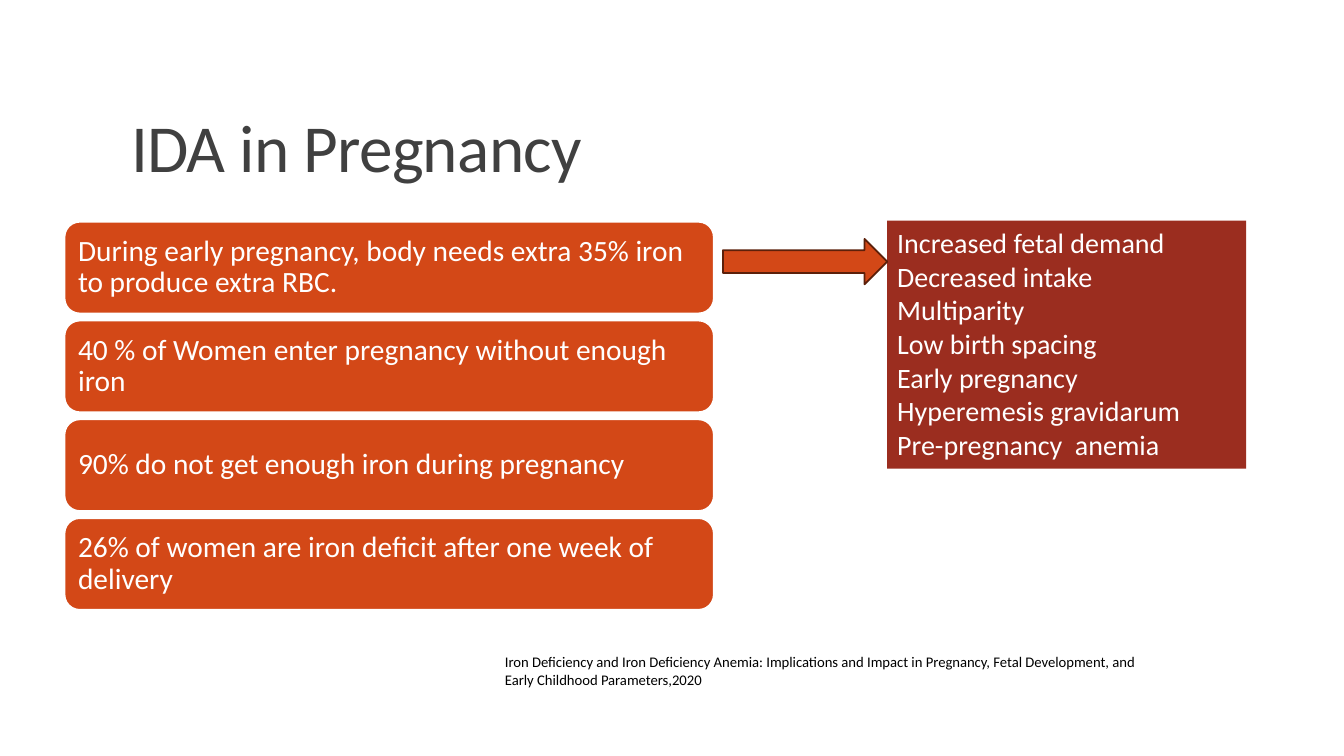
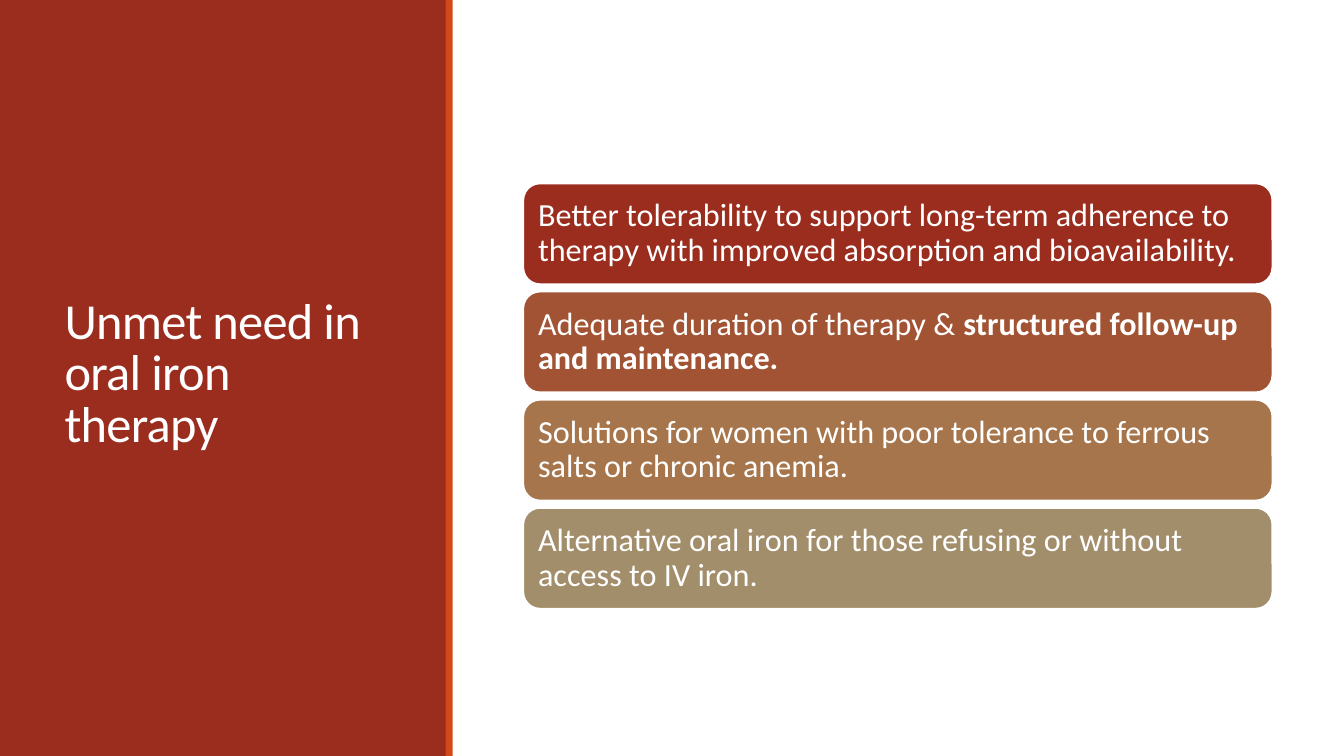
from dataclasses import dataclass

from pptx import Presentation
from pptx.dml.color import RGBColor
from pptx.enum.shapes import MSO_SHAPE as Preset
from pptx.enum.text import MSO_ANCHOR as Anchor, MSO_AUTO_SIZE as AutoSize, PP_ALIGN as Align
from pptx.shapes.autoshape import Shape
from pptx.slide import Slide
from pptx.text.text import TextFrame
from pptx.util import Inches, Pt

FONT = "Calibri"
WHITE = "FFFFFF"
BLACK = "000000"
TITLE_GREY = "404040"
ORANGE = "D34817"
DARK_RED = "9B2D1F"
ARROW_EDGE = "5C200A"


@dataclass(frozen=True)
class Box:
    left: float
    top: float
    width: float
    height: float

    def lengths(self) -> tuple[Inches, ...]:
        return tuple(Inches(n) for n in (self.left, self.top, self.width, self.height))


@dataclass(frozen=True)
class Card:
    text: str
    fill: str = ORANGE
    bold_ending: str = ""


@dataclass(frozen=True)
class CardStack:
    first: Box
    pitch: float
    inset: float
    font_size: float
    cards: tuple[Card, ...]


PREGNANCY_FACTS = CardStack(
    Box(0.64, 2.2, 6.44, 0.91), 0.98, 0.09, 21,
    (
        Card("During early pregnancy, body needs extra 35% iron to produce extra RBC."),
        Card("40 % of Women enter pregnancy without enough iron"),
        Card("90% do not get enough iron during pregnancy"),
        Card("26% of women are iron deficit after one week of delivery"),
    ),
)
UNMET_NEEDS = CardStack(
    Box(5.19, 1.82, 7.43, 1), 1.073, 0.1, 23,
    (
        Card("Better tolerability to support long-term adherence to therapy "
             "with improved absorption and bioavailability.", DARK_RED),
        Card("Adequate duration of therapy & ", "A25333", "structured follow-up and maintenance."),
        Card("Solutions for women with poor tolerance to ferrous salts or chronic anemia.", "A6754B"),
        Card("Alternative oral iron for those refusing or without access to IV iron.", "A28E6A"),
    ),
)
CAUSES = (
    "Increased fetal demand",
    "Decreased intake",
    "Multiparity",
    "Low birth spacing",
    "Early pregnancy",
    "Hyperemesis gravidarum",
    "Pre-pregnancy  anemia",
)
CITATION = (
    "Iron Deficiency and Iron Deficiency Anemia: Implications and Impact in Pregnancy, "
    "Fetal Development, and Early Childhood Parameters,2020"
)


def color(value: str) -> RGBColor:
    return RGBColor.from_string(value)


def format_text(frame: TextFrame, size: float, font_color: str, line_spacing: float = 1.0) -> None:
    frame.word_wrap = True
    for paragraph in frame.paragraphs:
        paragraph.alignment = Align.LEFT
        paragraph.line_spacing = line_spacing
        for run in paragraph.runs:
            run.font.name = FONT
            run.font.size = Pt(size)
            run.font.color.rgb = color(font_color)


def add_block(slide: Slide, preset: Preset, box: Box, fill: str, edge: str | None = None) -> Shape:
    block = slide.shapes.add_shape(preset, *box.lengths())
    block.shadow.inherit = False
    block.fill.solid()
    block.fill.fore_color.rgb = color(fill)
    if edge:
        block.line.color.rgb = color(edge)
        block.line.width = Pt(1.25)
    else:
        block.line.fill.background()
    return block


def set_title(slide: Slide, text: str, box: Box, size: float, font_color: str, anchor: Anchor) -> None:
    title = slide.shapes.title
    title.left, title.top, title.width, title.height = box.lengths()
    frame = title.text_frame
    frame.text = text
    frame.auto_size = AutoSize.NONE
    frame.vertical_anchor = anchor
    format_text(frame, size, font_color, 0.85)
    for run in frame.paragraphs[0].runs:
        run.font._element.set("spc", "-50")


def add_cards(slide: Slide, stack: CardStack) -> None:
    first = stack.first
    for index, card in enumerate(stack.cards):
        box = Box(first.left, first.top + index * stack.pitch, first.width, first.height)
        shape = add_block(slide, Preset.ROUNDED_RECTANGLE, box, card.fill, WHITE)
        frame = shape.text_frame
        frame.text = card.text
        if card.bold_ending:
            ending = frame.paragraphs[0].add_run()
            ending.text = card.bold_ending
            ending.font.bold = True
        frame.vertical_anchor = Anchor.MIDDLE
        frame.margin_left = frame.margin_right = Inches(stack.inset)
        frame.margin_top = frame.margin_bottom = Inches(stack.inset)
        format_text(frame, stack.font_size, WHITE, 0.9)


def build_pregnancy_slide(slide: Slide) -> None:
    set_title(slide, "IDA in Pregnancy", Box(1.2, 0.31, 11, 1.59), 48, TITLE_GREY, Anchor.BOTTOM)
    add_cards(slide, PREGNANCY_FACTS)

    citation = slide.shapes.add_textbox(*Box(4.91, 6.43, 6.67, 0.45).lengths())
    citation.text_frame.text = CITATION
    format_text(citation.text_frame, 10.5, BLACK)

    causes = add_block(slide, Preset.RECTANGLE, Box(8.8, 2.19, 3.56, 2.46), DARK_RED)
    causes.text_frame.text = "\n".join(CAUSES)
    causes.text_frame.vertical_anchor = Anchor.TOP
    format_text(causes.text_frame, 20, WHITE)

    add_block(slide, Preset.RIGHT_ARROW, Box(7.17, 2.37, 1.63, 0.45), ORANGE, ARROW_EDGE)


def build_unmet_need_slide(slide: Slide) -> None:
    panel = add_block(slide, Preset.RECTANGLE, Box(0, 0, 4.43, 7.5), DARK_RED)
    panel.element.addnext(slide.shapes.title.element)
    set_title(slide, "Unmet need in oral iron therapy", Box(0.54, 0.57, 3.37, 6.31),
              36, WHITE, Anchor.MIDDLE)
    add_block(slide, Preset.RECTANGLE, Box(4.42, 0, 0.07, 7.5), ORANGE)
    add_cards(slide, UNMET_NEEDS)


def main() -> None:
    presentation = Presentation()
    presentation.slide_width = Inches(13.33)
    presentation.slide_height = Inches(7.5)
    title_only = presentation.slide_layouts.get_by_name("Title Only")
    for build in (build_pregnancy_slide, build_unmet_need_slide):
        build(presentation.slides.add_slide(title_only))
    presentation.save("out.pptx")


if __name__ == "__main__":
    main()
